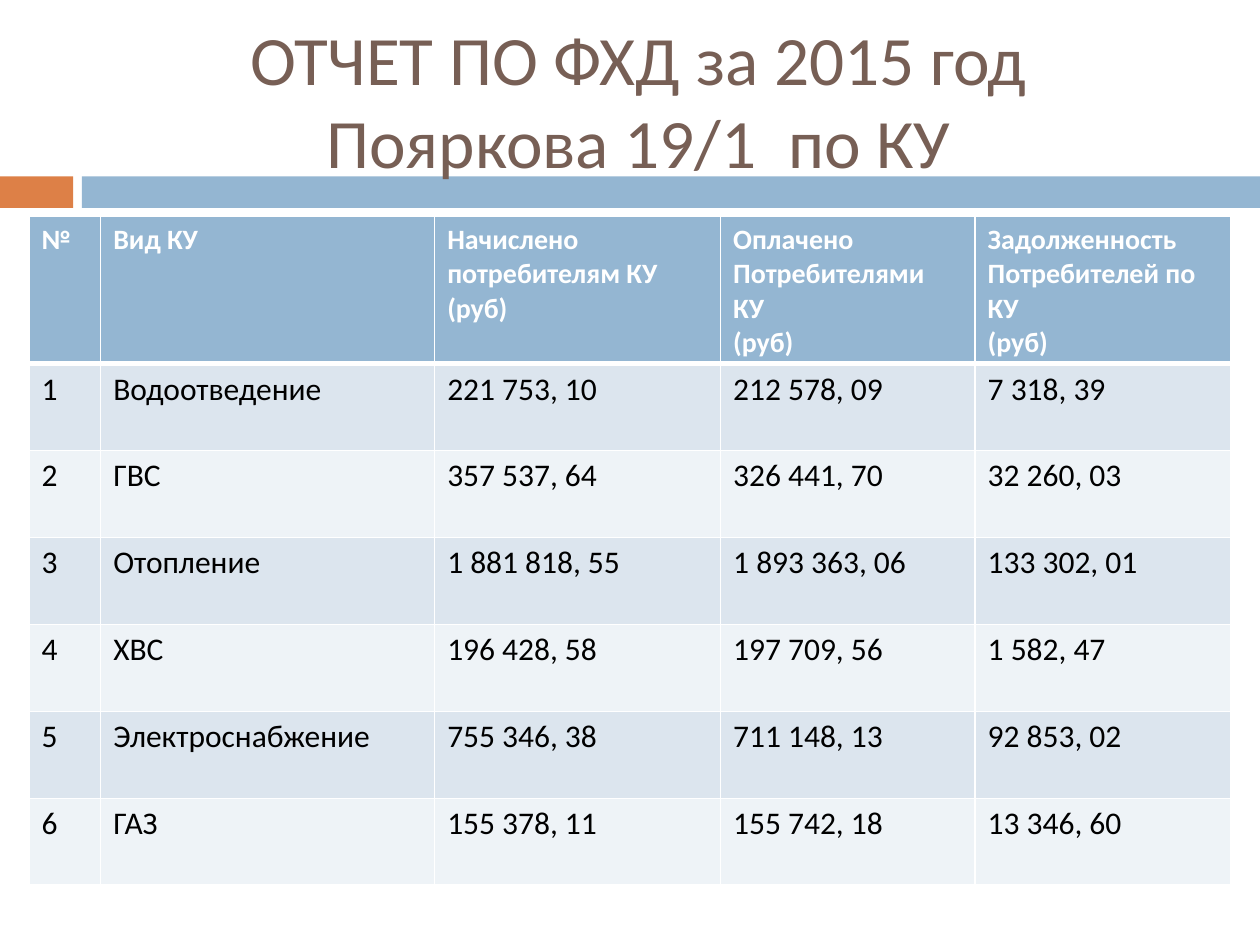
import pptx
import pptx.util
import pptx.dml.color
import pptx.enum.shapes
import pptx.enum.text
import pptx.oxml
import pptx.oxml.ns
from pptx.util import Inches

FONT = "Calibri"
WHITE, BLUE, ORANGE, BROWN = "FFFFFF", "94B6D2", "DD8047", "775F55"
BANDS = ("DCE5EE", "EEF3F7")
TITLE = "ОТЧЕТ ПО ФХД за 2015 год \vПояркова 19/1  по КУ "
COLUMN_WIDTHS = (0.57, 2.65, 2.27, 2.02, 2.03)
HEADER_HEIGHT, ROW_HEIGHT = 1.04, 0.69
HEADER = (
    "№",
    "Вид КУ",
    "Начислено потребителям КУ\n(руб)",
    "Оплачено\nПотребителями\nКУ\n(руб)",
    "Задолженность\nПотребителей по КУ\n(руб)",
)
UTILITIES = (
    ("Водоотведение", "221 753, 10", "212 578, 09", "7 318, 39"),
    ("ГВС", "357 537, 64", "326 441, 70", "32 260, 03"),
    ("Отопление", "1 881 818, 55", "1 893 363, 06", "133 302, 01"),
    ("ХВС", "196 428, 58", "197 709, 56", "1 582, 47"),
    ("Электроснабжение", "755 346, 38", "711 148, 13", "92 853, 02"),
    ("ГАЗ", "155 378, 11", "155 742, 18", "13 346, 60"),
)


def color(value):
    """Turn a hex string into a colour."""
    return pptx.dml.color.RGBColor.from_string(value)


def format_text(text_frame, size, value, bold=False):
    """Set the font of every run in a text frame."""
    for paragraph in text_frame.paragraphs:
        for run in paragraph.runs:
            run.font.name = FONT
            run.font.size = pptx.util.Pt(size)
            run.font.bold = bold
            run.font.color.rgb = color(value)


def add_bar(slide, left, top, width, height, fill):
    """Add a plain filled rectangle."""
    shape = slide.shapes.add_shape(
        pptx.enum.shapes.MSO_SHAPE.RECTANGLE, left, top, width, height)
    shape.shadow.inherit = False
    shape.fill.solid()
    shape.fill.fore_color.rgb = color(fill)
    shape.line.fill.background()


def add_stripe(slide, left, top, width, height):
    """Add the short orange and the long blue bar across the slide."""
    orange_width, offset = Inches(0.58), Inches(0.65)
    add_bar(slide, left, top, orange_width, height, ORANGE)
    add_bar(slide, left + offset, top, width - offset, height, BLUE)


def add_title(slide, left, top, width, height):
    """Add the centred two-line title."""
    text_frame = slide.shapes.add_textbox(left, top, width, height).text_frame
    text_frame.word_wrap = True
    text_frame.vertical_anchor = pptx.enum.text.MSO_ANCHOR.MIDDLE
    text_frame.text = TITLE
    text_frame.paragraphs[0].alignment = pptx.enum.text.PP_ALIGN.CENTER
    format_text(text_frame, 39.6, BROWN)


def set_borders(cell, top, bottom):
    """Draw white cell borders with the given top and bottom widths."""
    properties = cell._tc.get_or_add_tcPr()
    for side, points in (("L", 1), ("R", 1), ("T", top), ("B", bottom)):
        properties.append(pptx.oxml.parse_xml(
            f'<a:ln{side} {pptx.oxml.ns.nsdecls("a")} w="{pptx.util.Pt(points)}">'
            f'<a:solidFill><a:srgbClr val="{WHITE}"/></a:solidFill></a:ln{side}>'))


def add_report_table(slide, left, top):
    """Add the table of utility charges, payments and debts."""
    rows = [HEADER] + [(str(number), *utility)
                       for number, utility in enumerate(UTILITIES, 1)]
    heights = [HEADER_HEIGHT] + [ROW_HEIGHT] * len(UTILITIES)
    table = slide.shapes.add_table(
        len(rows), len(COLUMN_WIDTHS), left, top,
        Inches(sum(COLUMN_WIDTHS)), Inches(sum(heights))).table
    for column, width in zip(table.columns, COLUMN_WIDTHS):
        column.width = Inches(width)
    for row_index, (texts, height) in enumerate(zip(rows, heights)):
        table.rows[row_index].height = Inches(height)
        is_header = row_index == 0
        fill = BLUE if is_header else BANDS[(row_index - 1) % 2]
        for column_index, text in enumerate(texts):
            cell = table.cell(row_index, column_index)
            cell.text_frame.text = text
            format_text(cell.text_frame, 16 if is_header else 18,
                        WHITE if is_header else "000000", is_header)
            set_borders(cell, 3 if row_index == 1 else 1, 3 if is_header else 1)
            cell.fill.solid()
            cell.fill.fore_color.rgb = color(fill)


def main():
    """Build the report slide and save it."""
    presentation = pptx.Presentation()
    presentation.slide_width = Inches(10)
    presentation.slide_height = Inches(7.5)
    slide = presentation.slides.add_slide(presentation.slide_layouts[6])
    add_stripe(slide, 0, Inches(1.4), presentation.slide_width, Inches(0.25))
    add_title(slide, Inches(0.67), Inches(0.25), Inches(8.92), Inches(1.08))
    add_report_table(slide, Inches(0.23), Inches(1.72))
    presentation.save("out.pptx")


if __name__ == "__main__":
    main()
